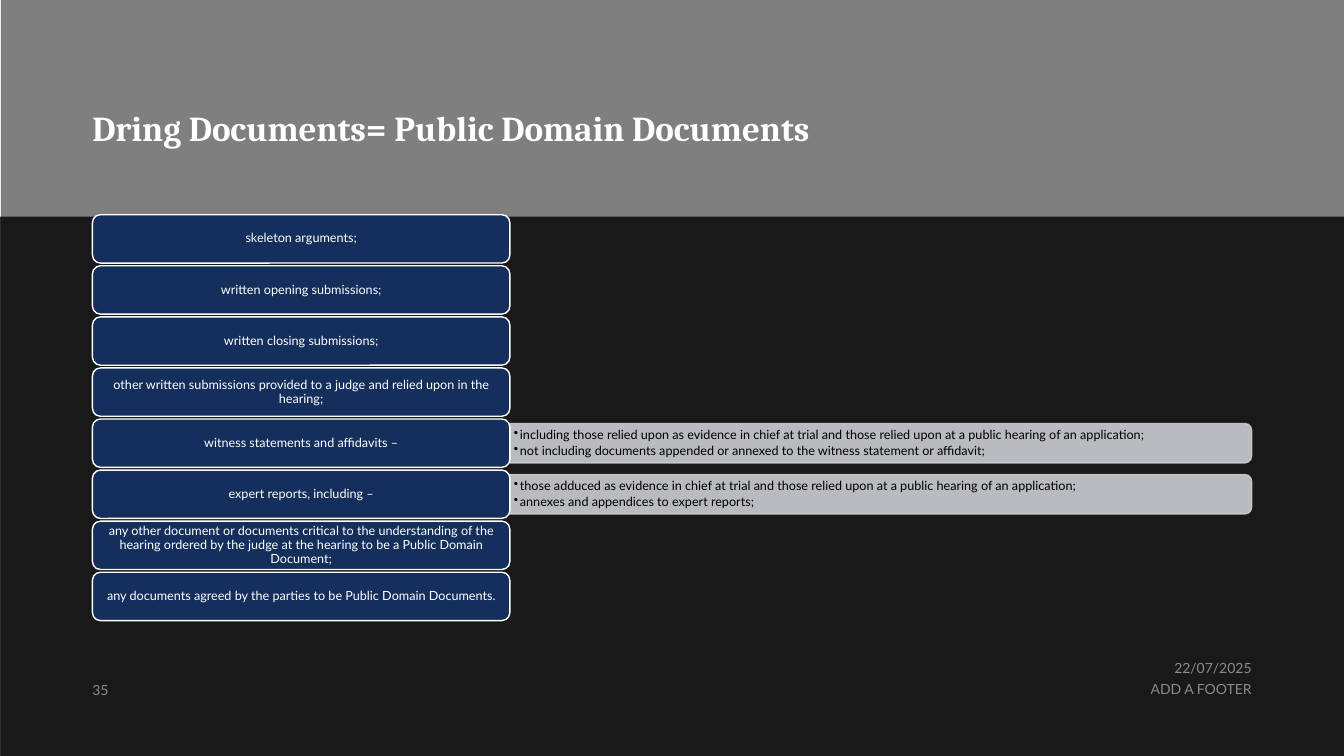
import dataclasses

import pptx
import pptx.dml.color
import pptx.enum.shapes
import pptx.enum.text
import pptx.oxml
import pptx.oxml.ns
import pptx.util

SHAPE = pptx.enum.shapes.MSO_SHAPE
ALIGN = pptx.enum.text.PP_ALIGN
ANCHOR = pptx.enum.text.MSO_ANCHOR
COLS, ROWS = 160, 90
EDGE = 11  # side margin in columns
TOP, STEP, TALL, WIDE = 25.56, 6.08, 5.76, 49.7  # bars, in grid cells
SLIM = 4.68  # height of a detail panel in rows

ITEMS = [
    ("skeleton arguments;", []),
    ("written opening submissions;", []),
    ("written closing submissions;", []),
    ("other written submissions provided to a judge and relied upon in the hearing;", []),
    ("witness statements and affidavits –", [
        "including those relied upon as evidence in chief at trial and those "
        "relied upon at a public hearing of an application;",
        "not including documents appended or annexed to the witness statement or affidavit;",
    ]),
    ("expert reports, including –", [
        "those adduced as evidence in chief at trial and those relied upon "
        "at a public hearing of an application;",
        "annexes and appendices to expert reports;",
    ]),
    ("any other document or documents critical to the understanding of the hearing "
     "ordered by the judge at the hearing to be a Public Domain Document;", []),
    ("any documents agreed by the parties to be Public Domain Documents.", []),
]


@dataclasses.dataclass
class Theme:
    head: str = "Cambria"
    body: str = "Lato"
    white: str = "FFFFFF"
    black: str = "000000"
    navy: str = "142F5C"
    panel: str = "CCCDD2"
    foot: str = "D9D9D9"
    title: int = 25
    note: int = 10
    text: int = 9


def rgb(code):
    return pptx.dml.color.RGBColor.from_string(code)


def fade(shape, share):
    """Set the opacity, in percent, of every plain colour in a shape."""
    for tint in shape.element.iter(pptx.oxml.ns.qn("a:srgbClr")):
        alpha = pptx.oxml.parse_xml(f'<a:alpha {pptx.oxml.ns.nsdecls("a")} val="{share * 1000}"/>')
        tint.append(alpha)


class Deck:
    def __init__(self, theme):
        self.theme = theme
        self.show = pptx.Presentation()
        self.show.slide_width = pptx.util.Inches(13.33)
        self.show.slide_height = pptx.util.Inches(7.5)
        self.slide = self.show.slides.add_slide(self.show.slide_layouts[6])

    def cells(self, x, y, w, h):
        """Turn grid columns and rows into slide lengths."""
        col = self.show.slide_width / COLS
        row = self.show.slide_height / ROWS
        return [round(n) for n in (x * col, y * row, w * col, h * row)]

    def shape(self, kind, box, fill, line=None):
        item = self.slide.shapes.add_shape(kind, *box)
        item.shadow.inherit = False
        item.fill.solid()
        item.fill.fore_color.rgb = rgb(fill)
        if line:
            item.line.color.rgb = rgb(line)
            item.line.width = pptx.util.Pt(1)
        else:
            item.line.fill.background()
        return item

    def words(self, item, lines, size, color, align=ALIGN.LEFT, anchor=ANCHOR.TOP,
              pad=(0, 0), space=0.9, font=None, bold=False, dots=False):
        """Fill a shape with one paragraph for each line."""
        frame = item.text_frame
        frame.word_wrap = True
        frame.vertical_anchor = anchor
        frame.margin_left = frame.margin_right = pptx.util.Inches(pad[0])
        frame.margin_top = frame.margin_bottom = pptx.util.Inches(pad[1])
        for i, line in enumerate(lines):
            para = frame.paragraphs[0] if i == 0 else frame.add_paragraph()
            if dots:
                self.dot(para)
                para.space_before = pptx.util.Pt(1.35 if i else 0)
            para.alignment = align
            para.line_spacing = space
            run = para.add_run()
            run.text = line
            run.font.name = font or self.theme.body
            run.font.size = pptx.util.Pt(size)
            run.font.bold = bold
            run.font.color.rgb = rgb(color)
        return item

    def dot(self, para):
        props = para._p.get_or_add_pPr()
        indent = pptx.util.Inches(0.06)
        props.set("marL", str(indent))
        props.set("indent", str(-indent))
        props.append(pptx.oxml.parse_xml(f'<a:buChar {pptx.oxml.ns.nsdecls("a")} char="•"/>'))

    def label(self, box, lines, size, color, **style):
        item = self.slide.shapes.add_textbox(*self.cells(*box))
        return self.words(item, lines, size, color, **style)

    def band(self, box, share):
        fade(self.shape(SHAPE.RECTANGLE, self.cells(*box), self.theme.black), share)

    def note(self, box, text, **style):
        fade(self.label(box, [text], self.theme.note, self.theme.foot, **style), 60)

    def bar(self, y, text):
        look = self.theme
        item = self.shape(SHAPE.ROUNDED_RECTANGLE, self.cells(EDGE, y, WIDE, TALL),
                          look.navy, look.white)
        self.words(item, [text], look.text, look.white, align=ALIGN.CENTER,
                   anchor=ANCHOR.MIDDLE, pad=(0.04, 0.02))

    def panel(self, y, lines):
        """Draw a panel rounded on its right side, with its bullets."""
        look = self.theme
        left = EDGE + WIDE
        grid = (left, y + (TALL - SLIM) / 2, COLS - EDGE - left, SLIM)
        x, top, w, h = self.cells(*grid)
        turned = (x + (w - h) // 2, top + (h - w) // 2, h, w)
        item = self.shape(SHAPE.ROUND_2_SAME_RECTANGLE, turned, look.panel, look.panel)
        item.rotation = 90
        fade(item, 90)
        self.label(grid, lines, look.text, look.black, anchor=ANCHOR.MIDDLE,
                   pad=(0.04, 0.02), dots=True)


def main():
    look = Theme()
    deck = Deck(look)
    deck.band((0.12, 0, COLS - 0.12, ROWS), 50)
    deck.band((0, 25.8, COLS, ROWS - 25.8), 80)
    deck.label((EDGE, 10.56, 90, 7.2), ["Dring Documents= Public Domain Documents"],
               look.title, look.white, anchor=ANCHOR.BOTTOM, font=look.head, bold=True)
    deck.note((113, 78.72, 36, 1.92), "22/07/2025", align=ALIGN.RIGHT)
    deck.note((95, 81, 54, 2.52), "ADD A FOOTER", align=ALIGN.RIGHT, space=1.0)
    deck.note((EDGE, 80.76, 6, 2.4), "35", anchor=ANCHOR.BOTTOM, space=1.0)
    for i, (text, lines) in enumerate(ITEMS):
        y = TOP + i * STEP
        if lines:
            deck.panel(y, lines)
        deck.bar(y, text)
    deck.show.save("out.pptx")


if __name__ == "__main__":
    main()
